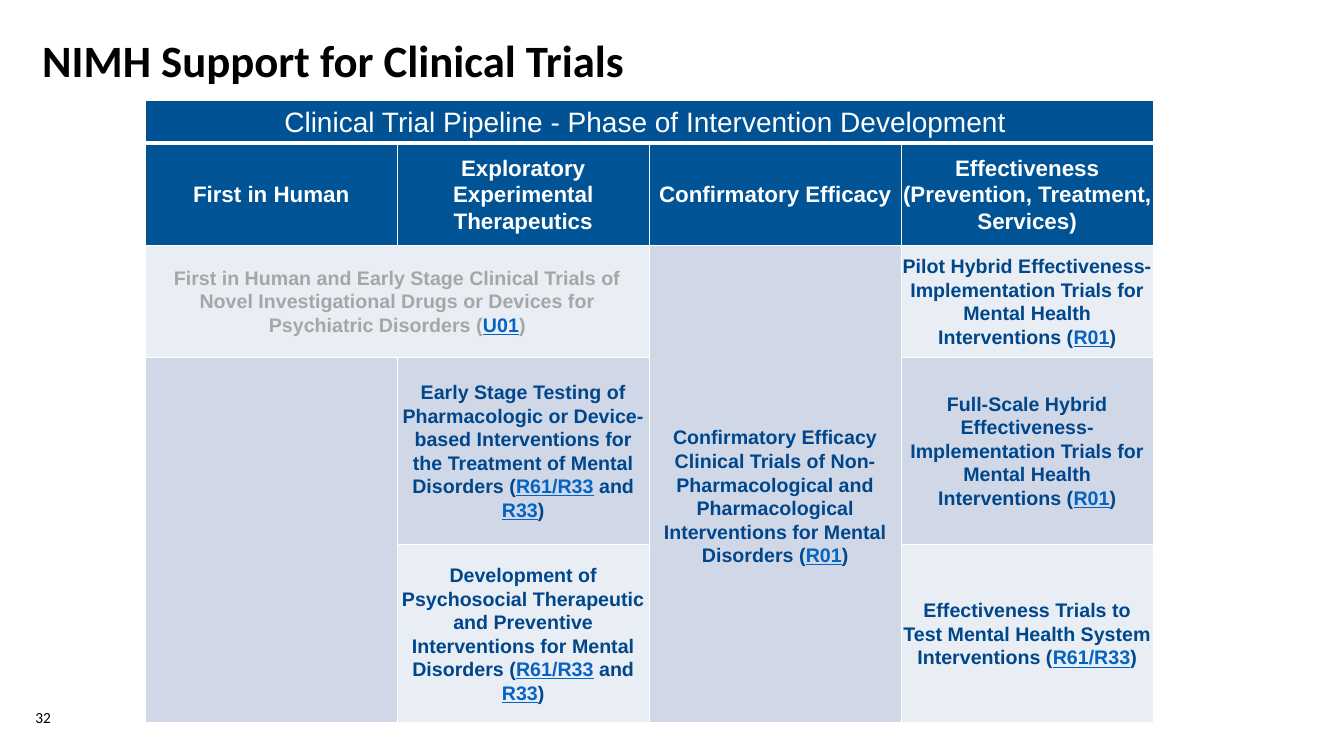
from lxml.etree import SubElement
from pptx import Presentation
from pptx.dml.color import RGBColor
from pptx.enum.text import MSO_ANCHOR as Anchor, PP_ALIGN as Align
from pptx.oxml.ns import qn
from pptx.util import Cm, Pt

COLORS = {
    "title": "000000", "white": "FFFFFF", "banner": "005294", "phase": "005395",
    "light": "E9EDF4", "mid": "D0D8E8", "muted": "A6A6A6", "navy": "00468B",
    "link": "0563C1",
}


def add_run(paragraph, text, color, **font_values):
    run = paragraph.add_run()
    run.text = text
    run.font.color.rgb = RGBColor.from_string(COLORS[color])
    for attribute, value in font_values.items():
        setattr(run.font, attribute, value)


def add_border(cell, side, points):
    line = SubElement(cell._tc.get_or_add_tcPr(), qn(f"a:{side}"), w=str(Pt(points)))
    SubElement(SubElement(line, qn("a:solidFill")), qn("a:srgbClr"), val=COLORS["white"])


prs = Presentation()
prs.slide_width, prs.slide_height = Cm(33.87), Cm(19.05)
slide = prs.slides.add_slide(prs.slide_layouts[5])

title = slide.shapes.title
title_box = {"left": Cm(0.81), "top": Cm(0.48), "width": Cm(31.95), "height": Cm(2.06)}
for attribute, value in title_box.items():
    setattr(title, attribute, value)
title.text_frame.vertical_anchor = Anchor.MIDDLE
heading = title.text_frame.paragraphs[0]
heading.alignment = Align.LEFT
add_run(heading, "NIMH Support for Clinical Trials", "title",
        name="Calibri", size=Pt(32), bold=True)

page_number = slide.shapes.add_textbox(Cm(0.53), Cm(17.78), Cm(1.12), Cm(0.58)).text_frame
page_format = {"vertical_anchor": Anchor.MIDDLE, "word_wrap": True, "margin_left": 0,
               "margin_right": 0, "margin_top": 0, "margin_bottom": 0}
for attribute, value in page_format.items():
    setattr(page_number, attribute, value)
page_number.paragraphs[0].alignment = Align.CENTER
add_run(page_number.paragraphs[0], "32", "title", name="Calibri", size=Pt(11))

row_heights = [1.07, 2.57, 2.82, 4.72, 4.5]
pipeline = slide.shapes.add_table(
    5, 4, Cm(3.66), Cm(2.54), Cm(25.4), Cm(sum(row_heights))).table
pipeline.first_row = pipeline.horz_banding = False
for row, height in zip(pipeline.rows, row_heights):
    row.height = Cm(height)
for column in pipeline.columns:
    column.width = Cm(6.35)

fills = [
    ["banner"] * 4,
    ["phase"] * 4,
    ["light", "light", "mid", "light"],
    ["mid"] * 4,
    ["mid", "light", "mid", "light"],
]
cell_format = {"vertical_anchor": Anchor.MIDDLE, "margin_left": Cm(0.03),
               "margin_right": Cm(0.03), "margin_top": Cm(0.03), "margin_bottom": Cm(0.03)}
for r, row_fills in enumerate(fills):
    for c, fill in enumerate(row_fills):
        cell = pipeline.cell(r, c)
        for side in ("lnL", "lnR", "lnT", "lnB"):
            under_banner = (r, side) in [(0, "lnB"), (1, "lnT")]
            add_border(cell, side, 3 if under_banner else 1)
        cell.fill.solid()
        cell.fill.fore_color.rgb = RGBColor.from_string(COLORS[fill])
        for attribute, value in cell_format.items():
            setattr(cell, attribute, value)

for first, last in [((0, 0), (0, 3)), ((2, 0), (2, 1)), ((2, 2), (4, 2)), ((3, 0), (4, 0))]:
    pipeline.cell(*first).merge(pipeline.cell(*last))
pipeline.cell(2, 2).margin_top = Cm(0.64)

phases_and_trials = {
    (0, 0): "Clinical Trial Pipeline - Phase of Intervention Development ",
    (1, 0): "First in Human",
    (1, 1): "Exploratory Experimental Therapeutics",
    (1, 2): "Confirmatory Efficacy",
    (1, 3): "Effectiveness (Prevention, Treatment, Services)",
    (2, 0): "First in Human and Early Stage Clinical Trials of Novel Investigational "
            "Drugs or Devices for Psychiatric Disorders (|U01|)",
    (2, 2): "Confirmatory Efficacy Clinical Trials of Non-Pharmacological and "
            "Pharmacological Interventions for Mental Disorders (|R01|)",
    (2, 3): "Pilot Hybrid Effectiveness-Implementation Trials for Mental Health "
            "Interventions (|R01|)",
    (3, 1): "Early Stage Testing of Pharmacologic or Device-based Interventions for "
            "the Treatment of Mental Disorders (|R61/R33| and |R33|)",
    (3, 3): "Full-Scale Hybrid Effectiveness-Implementation Trials for Mental Health "
            "Interventions (|R01|)",
    (4, 1): "Development of Psychosocial Therapeutic and Preventive Interventions for "
            "Mental Disorders (|R61/R33| and |R33|)",
    (4, 3): "Effectiveness Trials to Test Mental Health System Interventions (|R61/R33|)",
}
for (r, c), wording in phases_and_trials.items():
    paragraph = pipeline.cell(r, c).text_frame.paragraphs[0]
    paragraph_format = {"alignment": Align.CENTER, "line_spacing": 1.07,
                        "space_after": Pt(8 if r > 1 else 0)}
    for attribute, value in paragraph_format.items():
        setattr(paragraph, attribute, value)
    size = {0: 20, 1: 16}.get(r, 14)
    text_color = "white" if r < 2 else "muted" if (r, c) == (2, 0) else "navy"
    for position, part in enumerate(wording.split("|")):
        is_grant = position % 2 == 1
        add_run(paragraph, part, "link" if is_grant else text_color, name="Arial",
                size=Pt(size), bold=r > 0, underline=is_grant)

prs.save("out.pptx")
